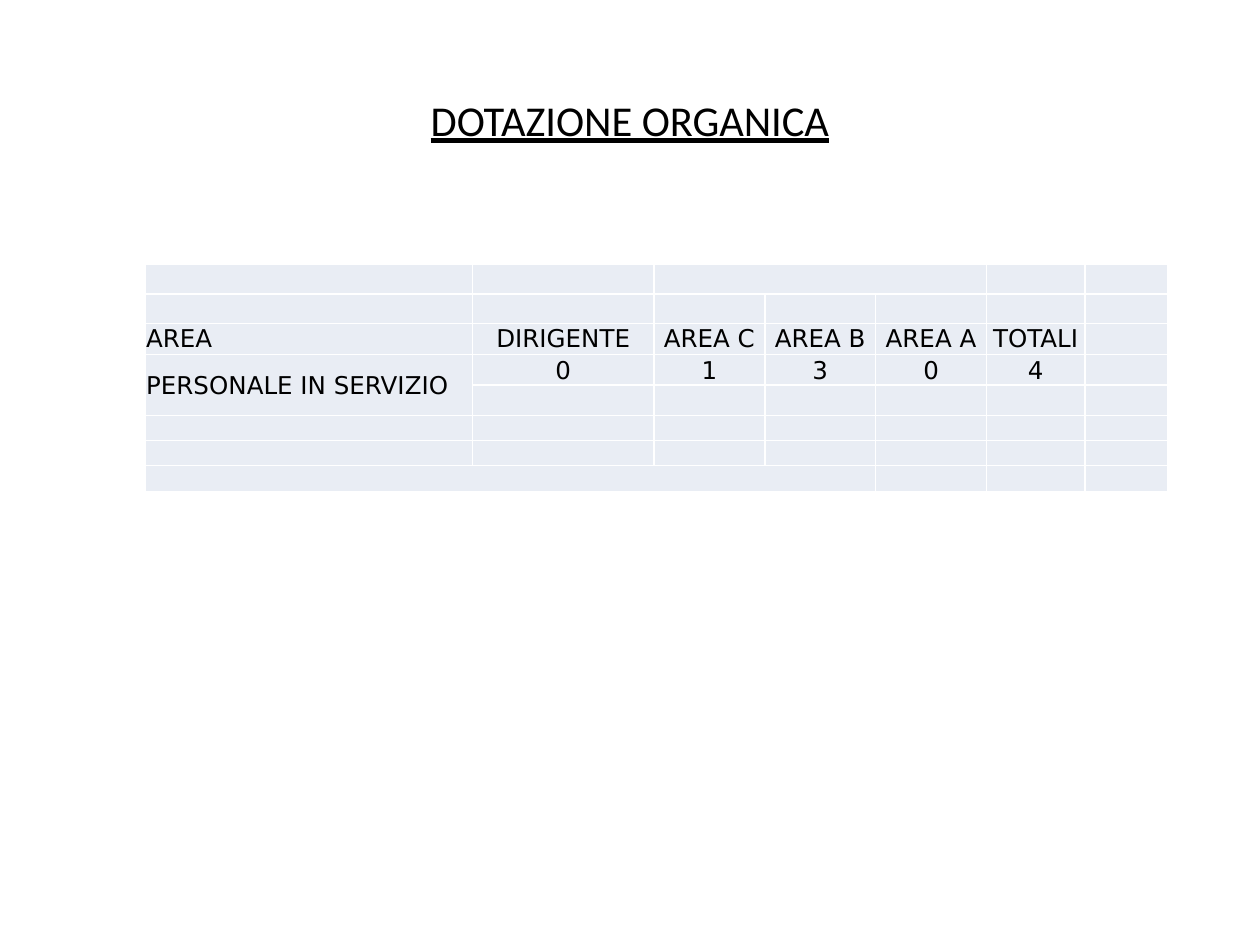
"""Build the staffing slide: an underlined title above a table of staff by area."""
import pptx
import pptx.dml.color
import pptx.enum.text
import pptx.oxml.ns
import pptx.util
from lxml import etree

COLORS = {"text": "000000", "cell": "E9EDF4", "border": "FFFFFF"}
SLIDE_WIDTH, SLIDE_HEIGHT = 10, 7.5
COLUMN_WIDTHS = [2.6, 1.44, 0.88, 0.88, 0.88, 0.78, 0.66]
ROW_HEIGHTS = [0.235] * 3 + [0.24] * 2 + [0.2] * 2 + [0.21]
HEADER_ROW, STAFF_ROW = 2, 3
HEADINGS = ["AREA", "DIRIGENTE", "AREA C", "AREA B", "AREA A", "TOTALI"]
STAFF = ["PERSONALE IN SERVIZIO", "0", "1", "3", "0", "4"]
MERGES = [((0, 2), (0, 4)), ((3, 0), (4, 0)), ((7, 0), (7, 3))]
ANCHOR = pptx.enum.text.MSO_ANCHOR
ALIGN = pptx.enum.text.PP_ALIGN


def rgb(role):
    """Return the colour that plays a role."""
    return pptx.dml.color.RGBColor.from_string(COLORS[role])


def add_child(parent, tag, **attributes):
    """Append a DrawingML element to a parent."""
    return etree.SubElement(parent, pptx.oxml.ns.qn(tag), attributes)


def style_paragraph(paragraph, font_name, size, align):
    """Set the font and alignment of a paragraph."""
    paragraph.alignment = align
    paragraph.font.name = font_name
    paragraph.font.size = pptx.util.Pt(size)
    paragraph.font.color.rgb = rgb("text")


def add_title(slide, text):
    """Add the centred, underlined title."""
    box = slide.shapes.add_textbox(*map(pptx.util.Inches, (
        SLIDE_WIDTH * 0.05, 0.32, SLIDE_WIDTH * 0.9, 1.25)))
    frame = box.text_frame
    frame.word_wrap = True
    frame.vertical_anchor = ANCHOR.MIDDLE
    title = frame.paragraphs[0]
    title.text = text
    style_paragraph(title, "Calibri", 24.3, ALIGN.CENTER)
    title.font.underline = True


def style_cell(cell):
    """Give a cell its margins, white borders and fill."""
    cell.margin_left = cell.margin_right = cell.margin_top = pptx.util.Inches(0.01)
    cell.margin_bottom = 0
    properties = cell._tc.get_or_add_tcPr()
    for side in ("a:lnL", "a:lnR", "a:lnT", "a:lnB"):
        line = add_child(properties, side, w=str(pptx.util.Pt(1)))
        add_child(add_child(line, "a:solidFill"), "a:srgbClr", val=COLORS["border"])
    cell.fill.solid()
    cell.fill.fore_color.rgb = rgb("cell")


def write_cell(cell, text, anchor, align):
    """Write text in a cell, or keep an empty cell's line low."""
    paragraph = cell.text_frame.paragraphs[0]
    if text:
        paragraph.text = text
        style_paragraph(paragraph, "DejaVu Sans", 14, align)
        cell.vertical_anchor = anchor
    else:
        add_child(paragraph._p, "a:endParaRPr", sz="1000")


def add_staff_table(slide):
    """Add the table of staff in service by area."""
    table = slide.shapes.add_table(
        len(ROW_HEIGHTS), len(COLUMN_WIDTHS), *map(pptx.util.Inches, (
            1.15, 2.1, sum(COLUMN_WIDTHS), sum(ROW_HEIGHTS)))).table
    table.first_row = table.horz_banding = False
    for column, width in zip(table.columns, COLUMN_WIDTHS):
        column.width = pptx.util.Inches(width)
    for row, height in zip(table.rows, ROW_HEIGHTS):
        row.height = pptx.util.Inches(height)
    contents = {HEADER_ROW: (HEADINGS, ANCHOR.TOP), STAFF_ROW: (STAFF, ANCHOR.BOTTOM)}
    for row_index, row in enumerate(table.rows):
        texts, anchor = contents.get(row_index, ([], ANCHOR.TOP))
        for column_index, cell in enumerate(row.cells):
            text = texts[column_index] if column_index < len(texts) else ""
            align = ALIGN.CENTER if column_index else ALIGN.LEFT
            style_cell(cell)
            write_cell(cell, text, anchor, align)
    for first, last in MERGES:
        table.cell(*first).merge(table.cell(*last))
    table.cell(STAFF_ROW, 0).vertical_anchor = ANCHOR.MIDDLE


def main():
    """Build and save the slide."""
    presentation = pptx.Presentation()
    presentation.slide_width = pptx.util.Inches(SLIDE_WIDTH)
    presentation.slide_height = pptx.util.Inches(SLIDE_HEIGHT)
    slide = presentation.slides.add_slide(presentation.slide_layouts[6])
    add_title(slide, "DOTAZIONE ORGANICA")
    add_staff_table(slide)
    presentation.save("out.pptx")


if __name__ == "__main__":
    main()
